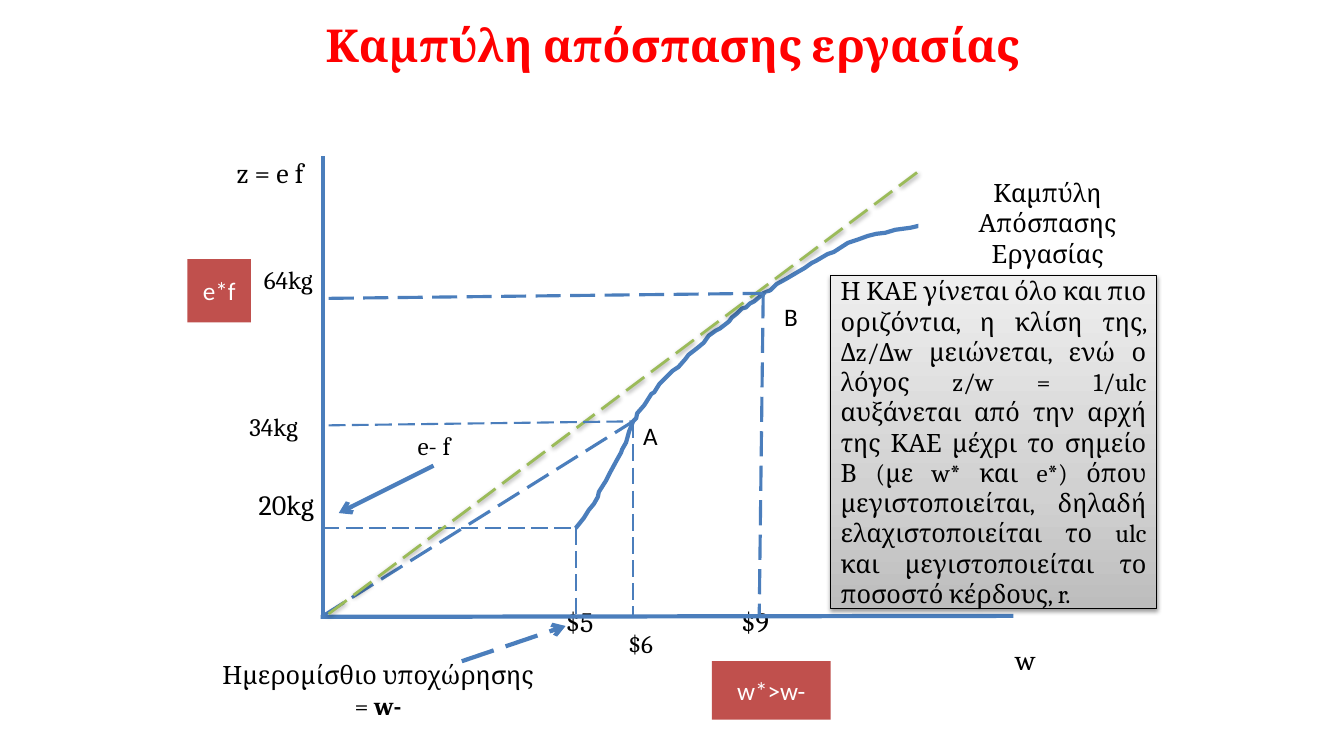
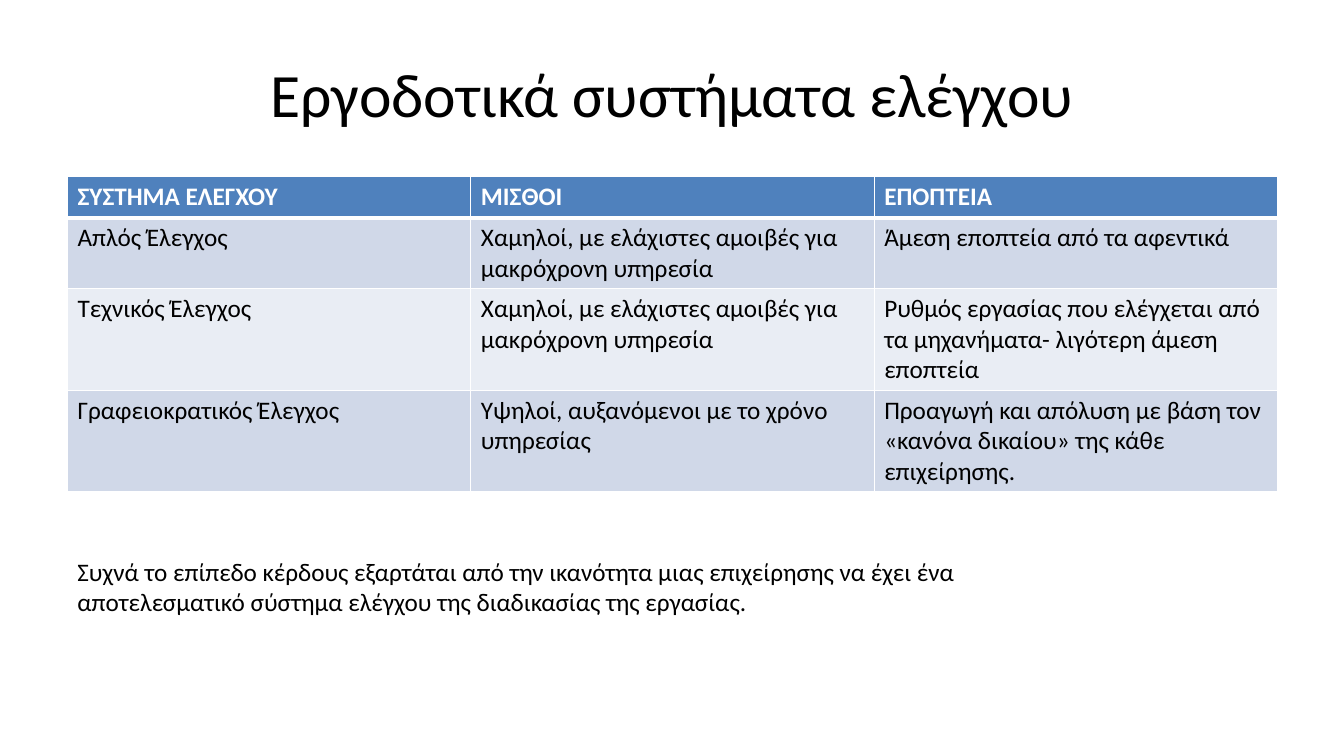
from lxml import etree
from pptx import Presentation
from pptx.dml.color import RGBColor
from pptx.enum.dml import MSO_LINE
from pptx.enum.shapes import MSO_CONNECTOR, MSO_SHAPE
from pptx.enum.text import MSO_ANCHOR, PP_ALIGN
from pptx.oxml.ns import qn
from pptx.util import Inches, Pt

STRAIGHT = MSO_CONNECTOR.STRAIGHT
RECTANGLE = MSO_SHAPE.RECTANGLE
DASH = MSO_LINE.LONG_DASH
MIDDLE, TOP = MSO_ANCHOR.MIDDLE, MSO_ANCHOR.TOP
LEFT, CENTER, JUSTIFY = PP_ALIGN.LEFT, PP_ALIGN.CENTER, PP_ALIGN.JUSTIFY
SERIF, SANS = "Cambria", "Calibri"

COLORS = {
    "black": "000000", "white": "FFFFFF", "title_red": "FF0000",
    "line": "4B7EBC", "ray": "9BBB59", "badge": "C0504D",
    "header": "4F81BD", "band_dark": "D0D8E8", "band_light": "E9EDF4",
}
NOTE_GRADIENT = [(0, "BDBDBD"), (35, "D1D1D1"), (100, "EEEEEE")]

ORIGIN = (3.2, 6.11)
POINT_START = (5.71, 5.24)
POINT_A = (6.28, 4.18)
POINT_B = (7.57, 2.91)

CURVE = [
    POINT_START, (5.79, 5.14), (5.84, 5.06), (5.89, 5), (5.93, 4.93),
    (5.94, 4.88), (6.01, 4.77), (6.05, 4.69), (6.11, 4.58), (6.16, 4.49),
    (6.17, 4.46), (6.21, 4.39), (6.24, 4.28), (6.28, 4.18), (6.31, 4.15),
    (6.32, 4.1), (6.39, 4.02), (6.46, 3.91), (6.49, 3.89), (6.54, 3.81),
    (6.6, 3.75), (6.67, 3.68), (6.73, 3.64), (6.8, 3.56), (6.83, 3.52),
    (6.92, 3.45), (6.98, 3.4), (7.03, 3.33), (7.1, 3.28), (7.14, 3.26),
    (7.23, 3.19), (7.26, 3.15), (7.31, 3.11), (7.36, 3.06), (7.4, 3.05),
    (7.44, 3.01), (7.48, 2.99), (7.54, 2.94), (7.57, 2.91), (7.64, 2.88),
    (7.7, 2.82), (7.81, 2.76), (7.91, 2.7), (7.98, 2.66), (8.05, 2.61),
    (8.09, 2.59), (8.21, 2.52), (8.27, 2.5), (8.41, 2.41), (8.5, 2.38),
    (8.61, 2.34), (8.69, 2.32), (8.78, 2.31), (8.88, 2.28), (9.03, 2.26),
    (9.16, 2.23), (9.25, 2.21), (9.38, 2.19), (9.44, 2.17), (9.49, 2.14),
]

NOTE = (
    "Η ΚΑΕ γίνεται όλο και πιο οριζόντια, η κλίση της, Δz/Δw μειώνεται, ενώ ο "
    "λόγος z/w = 1/ulc αυξάνεται από την αρχή της ΚΑΕ μέχρι το σημείο Β (με w* "
    "και e*) όπου μεγιστοποιείται, δηλαδή ελαχιστοποιείται το ulc και "
    "μεγιστοποιείται το ποσοστό κέρδους, r."
)

CONTROL_ROWS = [
    ("ΣΥΣΤΗΜΑ ΕΛΕΓΧΟΥ", "ΜΙΣΘΟΙ", "ΕΠΟΠΤΕΙΑ"),
    ("Απλός Έλεγχος", "Χαμηλοί, με ελάχιστες αμοιβές για μακρόχρονη υπηρεσία",
     "Άμεση εποπτεία από τα αφεντικά"),
    ("Τεχνικός Έλεγχος", "Χαμηλοί, με ελάχιστες αμοιβές για μακρόχρονη υπηρεσία",
     "Ρυθμός εργασίας που ελέγχεται από τα μηχανήματα- λιγότερη άμεση εποπτεία"),
    ("Γραφειοκρατικός Έλεγχος", "Υψηλοί, αυξανόμενοι με το χρόνο υπηρεσίας",
     "Προαγωγή και απόλυση με βάση τον «κανόνα δικαίου» της κάθε επιχείρησης."),
]
ROW_HEIGHTS = [0.41, 0.7, 1.01, 1.01]
NOTE_BELOW = (
    "Συχνά το επίπεδο κέρδους εξαρτάται από την ικανότητα μιας επιχείρησης να έχει "
    "ένα αποτελεσματικό σύστημα ελέγχου της διαδικασίας της εργασίας."
)


def rgb(name):
    return RGBColor.from_string(COLORS[name])


def lengths(values):
    return [Inches(value) for value in values]


def add_node(parent, tag, **attributes):
    return etree.SubElement(parent, qn(tag), attributes)


def style_span(span, size, font, color, bold=False):
    span.font.size = Pt(size)
    span.font.name = font
    span.font.bold = bold
    span.font.color.rgb = rgb(color)


def write(frame, text, size=18, font=SERIF, color="black", bold=False,
          align=CENTER, anchor=MIDDLE):
    frame.word_wrap = True
    frame.vertical_anchor = anchor
    frame.text = text
    para = frame.paragraphs[0]
    para.alignment = align
    style_span(para.runs[0], size, font, color, bold)


def add_text(page, place, text, **style):
    box = page.shapes.add_textbox(*lengths(place))
    write(box.text_frame, text, **style)


def add_label(page, place, text, fill="white", **style):
    box = page.shapes.add_shape(RECTANGLE, *lengths(place))
    box.shadow.inherit = False
    box.line.fill.background()
    if fill:
        box.fill.solid()
        box.fill.fore_color.rgb = rgb(fill)
    else:
        box.fill.background()
    write(box.text_frame, text, **style)
    return box


def add_shadow(effects):
    shadow = add_node(effects, "a:outerShdw", blurRad=str(Pt(3.1)),
                      dist=str(Pt(1.6)), dir="5400000", rotWithShape="0")
    color = add_node(shadow, "a:srgbClr", val=COLORS["black"])
    add_node(color, "a:alpha", val="38000")


def add_line(page, start, end, width, color="line", dash=None, arrow=False, shadow=False):
    line = page.shapes.add_connector(STRAIGHT, *lengths(start + end))
    line.line.color.rgb = rgb(color)
    line.line.width = Pt(width)
    if dash:
        line.line.dash_style = dash
    if arrow:
        add_node(line.line._get_or_add_ln(), "a:tailEnd", type="arrow")
    effects = add_node(line._element.spPr, "a:effectLst")
    if shadow:
        add_shadow(effects)


def add_curve(page, points):
    corners = [lengths(point) for point in points]
    builder = page.shapes.build_freeform(*corners[0])
    builder.add_line_segments(corners[1:], close=False)
    curve = builder.convert_to_shape()
    curve.shadow.inherit = False
    curve.fill.background()
    curve.line.color.rgb = rgb("line")
    curve.line.width = Pt(3)


def add_gradient_note(page, place, text):
    box = add_label(page, place, text, align=JUSTIFY)
    box.line.color.rgb = rgb("black")
    box.line.width = Pt(0.75)
    box.fill.gradient()
    box.fill.gradient_angle = 90
    properties = box._element.spPr
    stops = properties.find(qn("a:gradFill")).find(qn("a:gsLst"))
    for stop in list(stops):
        stops.remove(stop)
    for position, color in NOTE_GRADIENT:
        stop = add_node(stops, "a:gs", pos=str(position * 1000))
        add_node(stop, "a:srgbClr", val=color)
    add_shadow(properties.find(qn("a:effectLst")))


def add_borders(cell, widths):
    properties = cell._tc.get_or_add_tcPr()
    for side, width in zip("LRTB", widths):
        border = add_node(properties, f"a:ln{side}", w=str(Pt(width)))
        fill = add_node(border, "a:solidFill")
        add_node(fill, "a:srgbClr", val=COLORS["white"])


def add_control_table(page):
    place = (0.67, 1.75, 12, sum(ROW_HEIGHTS))
    table = page.shapes.add_table(len(CONTROL_ROWS), 3, *lengths(place)).table
    for row, height in zip(table.rows, ROW_HEIGHTS):
        row.height = Inches(height)
    for row_index, texts in enumerate(CONTROL_ROWS):
        header = row_index == 0
        band = "band_dark" if row_index % 2 else "band_light"
        borders = (1, 1, 3 if row_index == 1 else 1, 3 if header else 1)
        for column_index, text in enumerate(texts):
            cell = table.cell(row_index, column_index)
            add_borders(cell, borders)
            cell.fill.solid()
            cell.fill.fore_color.rgb = rgb("header" if header else band)
            write(cell.text_frame, text, font=SANS, bold=header, align=LEFT,
                  color="white" if header else "black", anchor=TOP)


def add_guides(page, point, foot, left, width):
    add_line(page, point, foot, width, dash=DASH)
    add_line(page, left, point, width, dash=DASH)


def build_curve_page(page):
    add_text(page, (2.17, 0.13, 9, 0.63), "Καμπύλη απόσπασης εργασίας",
             size=32.4, color="title_red", bold=True)

    add_label(page, (2.36, 2.57, 1, 0.4), "64kg", fill=None)
    for text, place in [("20kg", (2.34, 4.8, 1, 0.4)),
                        ("$5", (5.25, 5.96, 1, 0.4)),
                        ("$9", (6.99, 5.96, 1, 0.4))]:
        add_label(page, place, text, fill=None, size=20)

    add_line(page, (3.2, 1.55), ORIGIN, 3)
    add_line(page, (10.05, 6.11), (3.18, 6.12), 3)
    add_label(page, (2.18, 1.55, 1, 0.31), "z = e f", size=20)
    add_label(page, (9.66, 6.35, 1.02, 0.39), "w", size=20)

    add_curve(page, CURVE)
    add_guides(page, POINT_START, (5.71, 6.11), (3.2, 5.24), 1.5)

    wage = add_label(page, (2.02, 6.55, 3.46, 0.59), "Ημερομίσθιο υποχώρησης = ")
    span = wage.text_frame.paragraphs[0].add_run()
    span.text = "w-"
    style_span(span, 18, SERIF, "black", bold=True)
    add_label(page, (9.11, 1.7, 2.56, 1.02), "Καμπύλη Απόσπασης Εργασίας")
    add_label(page, (3.52, 4.22, 1.57, 0.39), "e- f")

    add_line(page, (4.3, 4.62), (3.36, 5.09), 3, arrow=True)
    add_line(page, ORIGIN, POINT_A, 2.25, dash=DASH)
    add_line(page, (3.26, 6.09), (9.11, 1.7), 2, color="ray", dash=DASH, shadow=True)
    add_guides(page, POINT_B, (7.53, 6.11), (3.26, 2.96), 2.25)
    add_line(page, (4.58, 6.56), (5.61, 6.21), 3, dash=DASH, arrow=True)

    add_label(page, (6.28, 4.22, 0.33, 0.2), "Α", font=SANS)
    add_label(page, (7.6, 2.91, 0.49, 0.45), "Β", font=SANS)
    add_gradient_note(page, (8.24, 2.73, 3.23, 3.31), NOTE)
    for text, place in [("w*>w-", (7.06, 6.56, 1.18, 0.58)),
                        ("e*f", (1.86, 2.57, 0.63, 0.63))]:
        add_label(page, place, text, fill="badge", font=SANS, color="white")

    add_guides(page, POINT_A, (6.28, 6.12), (3.26, 4.22), 1.5)
    add_label(page, (5.96, 6.21, 0.79, 0.34), "$6")
    add_label(page, (2.28, 3.96, 0.87, 0.55), "34kg")


def build_control_page(page):
    add_text(page, (0.67, 0.3, 12, 1.25), "Εργοδοτικά συστήματα ελέγχου",
             size=44, font=SANS)
    add_control_table(page)
    add_text(page, (0.67, 5.47, 10.5, 0.71), NOTE_BELOW, font=SANS,
             align=LEFT, anchor=TOP)


def main():
    deck = Presentation()
    deck.slide_width = Inches(13.33)
    deck.slide_height = Inches(7.5)
    for build in (build_curve_page, build_control_page):
        build(deck.slides.add_slide(deck.slide_layouts[6]))
    deck.save("out.pptx")


if __name__ == "__main__":
    main()
